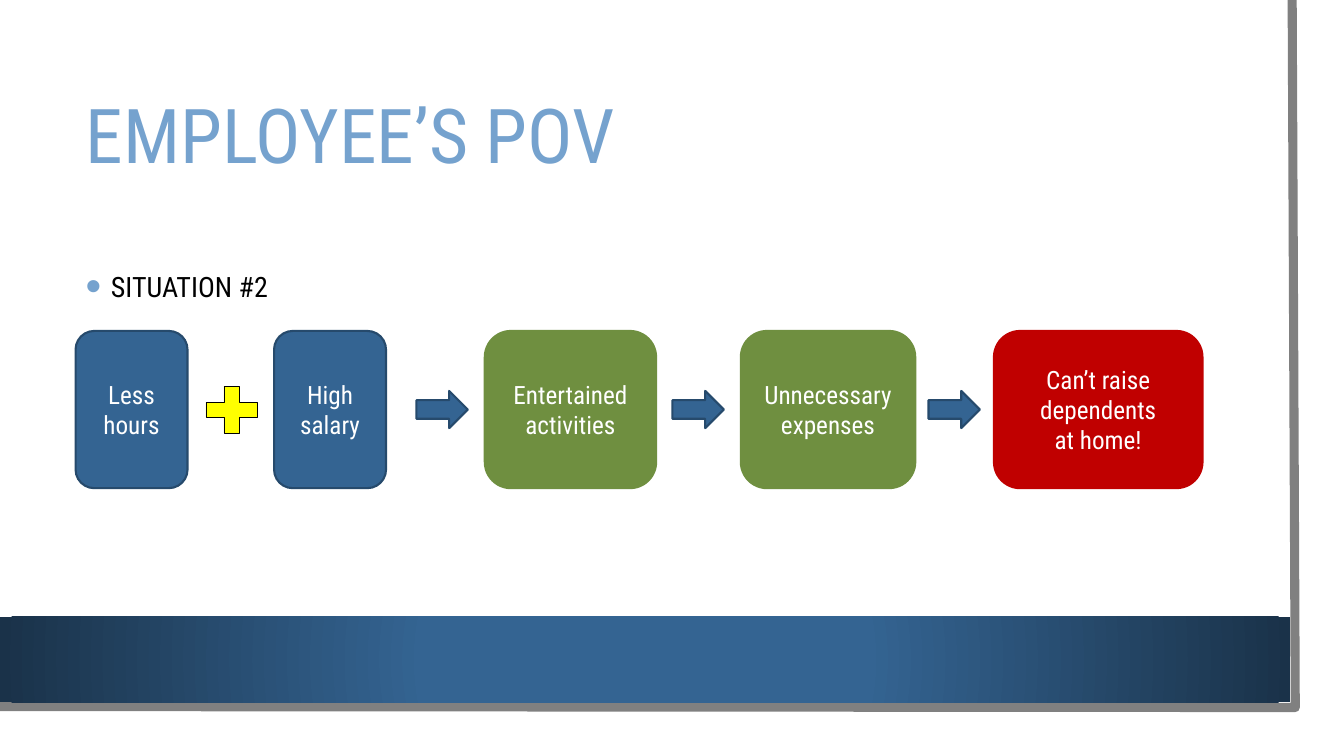
from lxml import etree
from pptx import Presentation
from pptx.dml.color import RGBColor
from pptx.enum.shapes import MSO_SHAPE as Shape
from pptx.enum.text import MSO_ANCHOR as Anchor, MSO_AUTO_SIZE as AutoSize, PP_ALIGN as Align
from pptx.oxml import parse_xml
from pptx.oxml.ns import nsdecls, qn
from pptx.util import Pt

FONT = "Roboto Condensed"
BLUE, NAVY, SKY, DARK = "346492", "264A6C", "75A2CE", "1A3249"
GREEN, RED, YELLOW, GREY = "6F8F40", "C00000", "FFFF00", "808080"
WHITE, BLACK = "FFFFFF", "000000"

# Flow steps: left, width, fill, outline, lines of text
STEPS = [
    (54, 80, BLUE, NAVY, ["Less hours"]),
    (195.8, 80, BLUE, NAVY, ["High salary"]),
    (346.3, 122.4, GREEN, GREEN, ["Entertained", "activities"]),
    (529.2, 124.6, GREEN, GREEN, ["Unnecessary expenses"]),
    (710, 149, RED, RED, ["Can’t raise dependents", "at home!"]),
]
PLUS_LEFT, PLUS_SIZE = 140.4, (49.7, 45.4)
ARROW_LEFT, ARROW_PITCH, ARROW_SIZE = 297.4, 182.9, (36.7, 26.6)


def color(hex_code):
    return RGBColor.from_string(hex_code)


def apply(target, formats):
    for name, value in formats.items():
        setattr(target, name, value)


def style_text(paragraph, size, hex_code, align=Align.LEFT, spacing=1.0):
    apply(paragraph, {"alignment": align, "line_spacing": spacing, "space_before": Pt(0)})
    apply(paragraph.font, {"name": FONT, "size": Pt(size)})
    paragraph.font.color.rgb = color(hex_code)


def add_part(slide, preset, box, fill, outline, weight=1.5):
    part = slide.shapes.add_shape(preset, *map(Pt, box))
    part.shadow.inherit = False
    part.fill.solid()
    part.fill.fore_color.rgb = color(fill)
    part.line.color.rgb = color(outline)
    part.line.width = Pt(weight)
    return part


def place(holder, box, formats):
    apply(holder, dict(zip(("left", "top", "width", "height"), map(Pt, box))))
    apply(holder.text_frame, {"auto_size": AutoSize.NONE, "word_wrap": True, **formats})


def add_frame(slide, box):
    """Grey page edge on the right and bottom, with the gradient band inside it."""
    left, top, width, height = box
    builder = slide.shapes.build_freeform(Pt(left + width - 2.2), Pt(top))
    builder.add_line_segments(
        [(Pt(left + width), Pt(top + height)), (Pt(left), Pt(top + height - 0.7))], close=False)
    edge = builder.convert_to_shape()
    edge.shadow.inherit = False
    edge.fill.background()
    edge.line.color.rgb = color(GREY)
    edge.line.width = Pt(6.5)

    band_box = (left, top + height - 64.8, width - 3.6, 61.2)
    band = add_part(slide, Shape.RECTANGLE, band_box, BLUE, BLUE)
    band.line.fill.background()
    gradient = parse_xml(
        f'<a:gradFill {nsdecls("a")} rotWithShape="1"><a:gsLst>'
        f'<a:gs pos="34000"><a:srgbClr val="{BLUE}"/></a:gs>'
        f'<a:gs pos="100000"><a:srgbClr val="{DARK}"/></a:gs></a:gsLst>'
        '<a:path path="circle"><a:fillToRect l="50000" t="50000" r="50000" b="50000"/></a:path>'
        '</a:gradFill>')
    solid = band.fill._xPr.find(qn("a:solidFill"))
    solid.getparent().replace(solid, gradient)


def add_title(slide, box):
    title = slide.shapes.title
    place(title, box, {"vertical_anchor": Anchor.MIDDLE, "text": "EMPLOYEE’S POV"})
    style_text(title.text_frame.paragraphs[0], 54, SKY, spacing=0.9)


def add_situation(slide, box):
    body = slide.placeholders[1]
    place(body, box, {"vertical_anchor": Anchor.TOP, "margin_top": Pt(29.5),
                      "text": "SITUATION #2"})
    bullet = body.text_frame.paragraphs[0]
    props = bullet._p.get_or_add_pPr()
    props.set("marL", str(Pt(18)))
    props.set("indent", str(Pt(-18)))
    tint = etree.SubElement(props, qn("a:buClr"))
    etree.SubElement(tint, qn("a:srgbClr"), val=SKY)
    etree.SubElement(props, qn("a:buSzPct"), val="160000")
    etree.SubElement(props, qn("a:buFont"), typeface="Arial")
    etree.SubElement(props, qn("a:buChar"), char="•")
    style_text(bullet, 20, BLACK)


def add_flow(slide, top, height):
    """Steps in one row, joined by a plus sign and evenly spaced arrows."""
    for left, width, fill, outline, lines in STEPS:
        step = add_part(slide, Shape.ROUNDED_RECTANGLE, (left, top, width, height), fill, outline)
        frame = step.text_frame
        apply(frame, {"word_wrap": True, "vertical_anchor": Anchor.MIDDLE,
                      "text": "\n".join(lines)})
        for paragraph in frame.paragraphs:
            style_text(paragraph, 18, WHITE, Align.CENTER)

    middle = top + height / 2
    plus_width, plus_height = PLUS_SIZE
    add_part(slide, Shape.MATH_PLUS,
             (PLUS_LEFT, middle - plus_height / 2, plus_width, plus_height), YELLOW, BLACK, 0.25)
    arrow_width, arrow_height = ARROW_SIZE
    for index in range(3):
        arrow_box = (ARROW_LEFT + index * ARROW_PITCH, middle - arrow_height / 2,
                     arrow_width, arrow_height)
        add_part(slide, Shape.RIGHT_ARROW, arrow_box, BLUE, NAVY)


def main():
    deck = Presentation()
    apply(deck, {"slide_width": Pt(960), "slide_height": Pt(540)})
    slide = deck.slides.add_slide(deck.slide_layouts[1])
    add_frame(slide, (0, 0, 925.2, 505.4))
    add_title(slide, (54, 54, 818.6, 90.7))
    add_situation(slide, (54, 162.7, 818.6, 260.6))
    add_flow(slide, 236.4, 112.3)
    deck.save("out.pptx")


if __name__ == "__main__":
    main()
